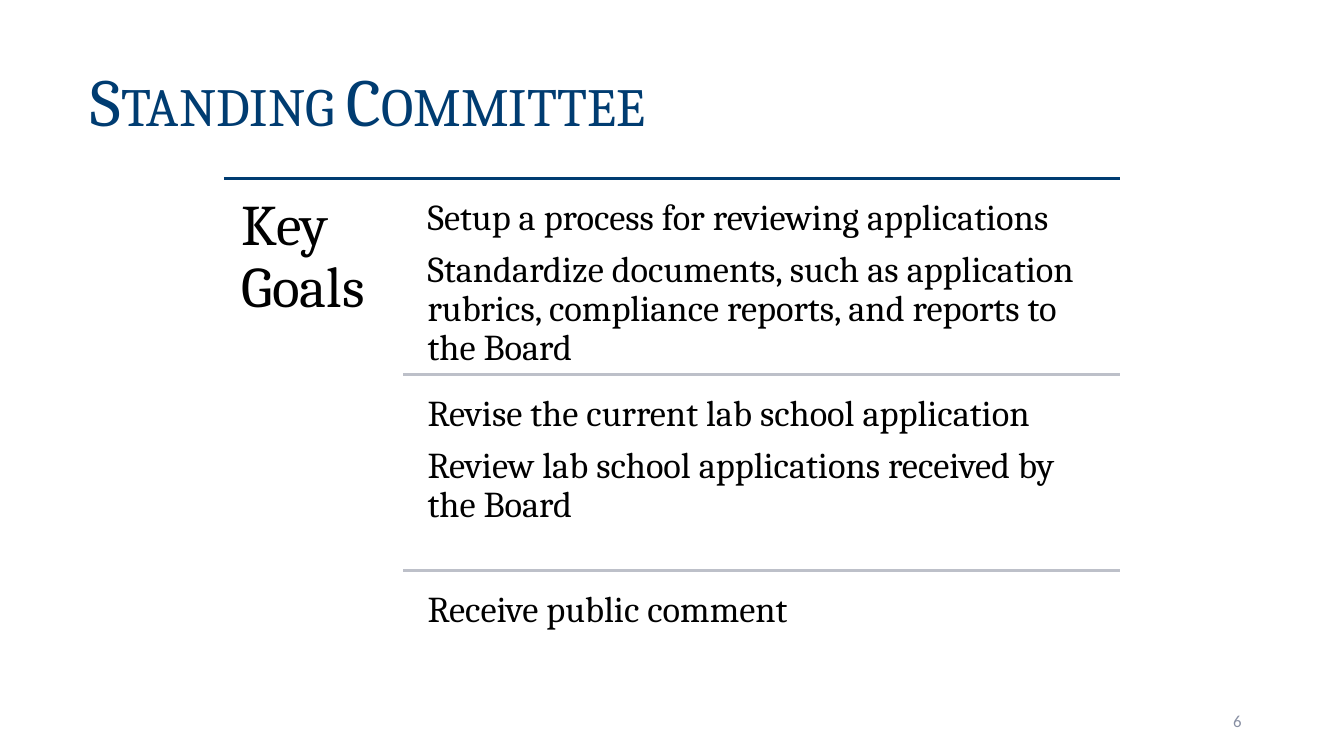
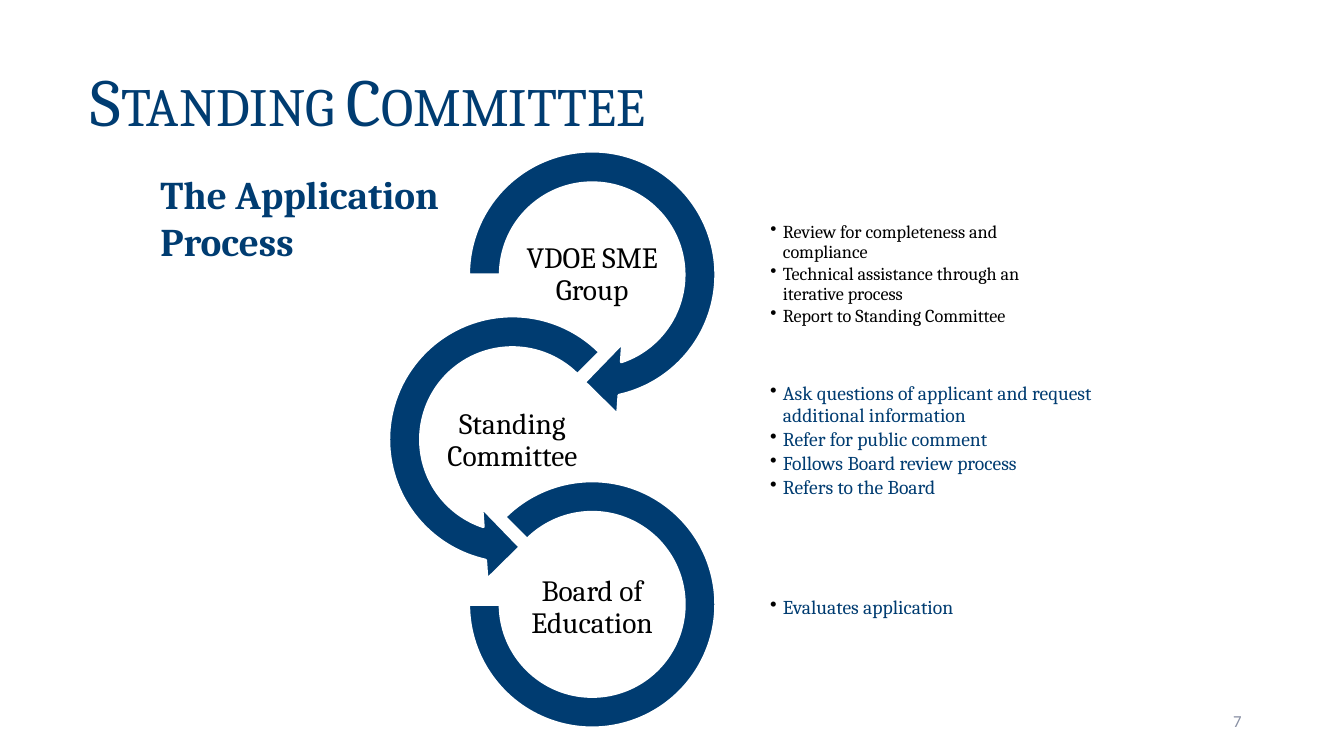
from dataclasses import dataclass

from lxml import etree
from pptx import Presentation
from pptx.dml.color import RGBColor
from pptx.enum.shapes import MSO_CONNECTOR, MSO_SHAPE
from pptx.enum.text import MSO_ANCHOR, MSO_AUTO_SIZE, PP_ALIGN
from pptx.oxml.ns import qn
from pptx.util import Pt

NAVY = RGBColor(0x00, 0x3C, 0x71)
BLACK = RGBColor(0x00, 0x00, 0x00)
WHITE = RGBColor(0xFF, 0xFF, 0xFF)
SILVER = RGBColor(0xBD, 0xC0, 0xC9)
SLATE = RGBColor(0x88, 0x8F, 0xA3)

SERIF, SANS = "Cambria", "Calibri"
TOP, MIDDLE, BOTTOM = MSO_ANCHOR.TOP, MSO_ANCHOR.MIDDLE, MSO_ANCHOR.BOTTOM
LEFT, CENTER, RIGHT = PP_ALIGN.LEFT, PP_ALIGN.CENTER, PP_ALIGN.RIGHT
STRAIGHT = MSO_CONNECTOR.STRAIGHT

PAGE_WIDTH, PAGE_HEIGHT = 960, 540
TITLE_ONLY = 5
TIGHT = 0.9
LABEL_GAP, BULLET_GAP = 0.35, 0.15  # space after, as a share of the text size
BULLET_INDENT = 9

GOALS = (
    ("Setup a process for reviewing applications",
     "Standardize documents, such as application rubrics, compliance reports, "
     "and reports to the Board"),
    ("Revise the current lab school application",
     "Review lab school applications received by the Board"),
    ("Receive public comment",),
)


@dataclass
class Step:
    label: str
    duties: tuple
    duty_size: int
    duty_color: RGBColor
    duty_width: float
    outline: int
    ring_size: float
    adjustments: tuple
    shift: float = 0


STEPS = (
    Step("VDOE SME Group",
         ("Review for completeness and compliance",
          "Technical assistance through an iterative process",
          "Report to Standing Committee"),
         13, BLACK, 217.5, MSO_SHAPE.CIRCULAR_ARROW, 205.2,
         (0.11, 11.42, 45, 108, 0.125)),
    Step("Standing Committee",
         ("Ask questions of applicant and request additional information",
          "Refer for public comment",
          "Follows Board review process",
          "Refers to the Board"),
         14, NAVY, 232.5, MSO_SHAPE.LEFT_CIRCULAR_ARROW, 205.2,
         (0.11, 11.42, 63, 189, 0.125), -57),
    Step("Board of Education",
         ("Evaluates application",),
         14, NAVY, 215.5, MSO_SHAPE.BLOCK_ARC, 176.4,
         (135, 108, 0.127)),
)


def set_frame(frame, anchor, insets):
    frame.word_wrap = True
    frame.auto_size = MSO_AUTO_SIZE.NONE
    frame.vertical_anchor = anchor
    (frame.margin_left, frame.margin_top,
     frame.margin_right, frame.margin_bottom) = map(Pt, insets)


def add_span(para, text, size, color, font=SERIF, bold=False):
    span = para.add_run()
    span.text = text
    span.font.size = Pt(size)
    span.font.name = font
    span.font.bold = bold
    span.font.color.rgb = color
    return span


def add_bullet(para):
    props = para._p.get_or_add_pPr()
    props.set("marL", str(Pt(BULLET_INDENT)))
    props.set("indent", str(Pt(-BULLET_INDENT)))
    color = etree.SubElement(props, qn("a:buClr"))
    etree.SubElement(color, qn("a:srgbClr")).set("val", str(BLACK))
    etree.SubElement(props, qn("a:buChar")).set("char", "•")


def add_text(page, box, lines, size, color, anchor=TOP, inset=0.7, align=LEFT,
             spacing=TIGHT, gap=0.0, bulleted=False, font=SERIF, bold=False):
    """Add a text box with one paragraph for each line."""
    shape = page.shapes.add_textbox(*map(Pt, box))
    frame = shape.text_frame
    set_frame(frame, anchor, (inset,) * 4)
    for index, line in enumerate(lines):
        para = frame.add_paragraph() if index else frame.paragraphs[0]
        para.alignment = align
        para.line_spacing = spacing
        para.space_after = Pt(round(size * gap, 1))
        if bulleted:
            add_bullet(para)
        add_span(para, line, size, color, font, bold)
    return shape


def add_rule(page, left, right, y, color):
    rule = page.shapes.add_connector(STRAIGHT, Pt(left), Pt(y), Pt(right), Pt(y))
    rule.line.color.rgb = color
    rule.line.width = Pt(2)
    etree.SubElement(rule._element.spPr, qn("a:effectLst"))


def add_page(deck, title, number):
    page = deck.slides.add_slide(deck.slide_layouts[TITLE_ONLY])
    heading = page.shapes.title
    heading.left, heading.top = Pt(0), Pt(0)
    heading.width, heading.height = Pt(PAGE_WIDTH), Pt(104.4)
    set_frame(heading.text_frame, BOTTOM, (64.8, 3.6, 7.2, 3.6))
    para = heading.text_frame.paragraphs[0]
    para.alignment = LEFT
    para.line_spacing = TIGHT
    span = add_span(para, title, 48, NAVY)
    span._r.get_or_add_rPr().set("cap", "small")
    add_text(page, (678, 500.5, 216, 28.8), [str(number)], 12, SLATE, MIDDLE,
             inset=7.2, align=RIGHT, spacing=1.0, font=SANS)
    return page


def add_goals(page, box):
    left, top, width, height = box
    right = left + width
    divider = left + width / 5
    row_left = divider + 9.6
    pitch, row_gap = 140, 6.8
    add_rule(page, left, right, top, NAVY)
    add_text(page, (left, top, width / 5, height), ["Key Goals"], 41, BLACK,
             inset=12.3, gap=LABEL_GAP)
    for index, goals in enumerate(GOALS):
        row_top = top + index * pitch
        if index:
            add_rule(page, divider, right, row_top, SILVER)
        add_text(page, (row_left, row_top + row_gap, right - row_left, pitch - row_gap),
                 goals, 26, BLACK, inset=7.8, gap=LABEL_GAP)


def add_ring(page, step, center_x, center_y):
    half = step.ring_size / 2
    ring = page.shapes.add_shape(step.outline, Pt(center_x - half), Pt(center_y - half),
                                 Pt(step.ring_size), Pt(step.ring_size))
    ring.shadow.inherit = False
    ring.fill.solid()
    ring.fill.fore_color.rgb = NAVY
    ring.line.color.rgb = WHITE
    ring.line.width = Pt(2)
    for index, value in enumerate(step.adjustments):
        ring.adjustments[index] = value


def add_process(page, box):
    """Chain the step rings down the box, with their duties to the right."""
    left, top, width, height = box
    ring_pitch, text_pitch = 117.75, 119
    label_width, label_height, duty_height = 114, 57, 85
    axis = left + 159.5
    first = top + STEPS[0].ring_size / 2
    duty_left = left + 286
    for index, step in enumerate(STEPS):
        center_x = axis + step.shift
        text_y = first + index * text_pitch
        add_ring(page, step, center_x, first + index * ring_pitch)
        add_text(page, (duty_left, text_y - duty_height / 2, step.duty_width, duty_height),
                 step.duties, step.duty_size, step.duty_color, MIDDLE,
                 gap=BULLET_GAP, bulleted=True)
        add_text(page, (center_x - label_width / 2, text_y - label_height / 2,
                        label_width, label_height),
                 [step.label], 21, BLACK, MIDDLE, align=CENTER, gap=LABEL_GAP)


def add_subtitle(page, box, text):
    shape = add_text(page, box, [text], 28, NAVY, spacing=1.0, bold=True)
    frame = shape.text_frame
    set_frame(frame, TOP, (7.2, 3.6, 7.2, 3.6))
    frame.auto_size = MSO_AUTO_SIZE.SHAPE_TO_FIT_TEXT


def main():
    deck = Presentation()
    deck.slide_width, deck.slide_height = Pt(PAGE_WIDTH), Pt(PAGE_HEIGHT)

    goals_page = add_page(deck, "Standing Committee", 6)
    add_goals(goals_page, (160, 127.5, 640, 427))

    process_page = add_page(deck, "Standing Committee", 7)
    add_process(process_page, (263.5, 93.6, 518.5, 426))
    add_subtitle(process_page, (107.5, 118, 229.5, 108.5), "The Application Process")

    deck.save("out.pptx")


if __name__ == "__main__":
    main()
